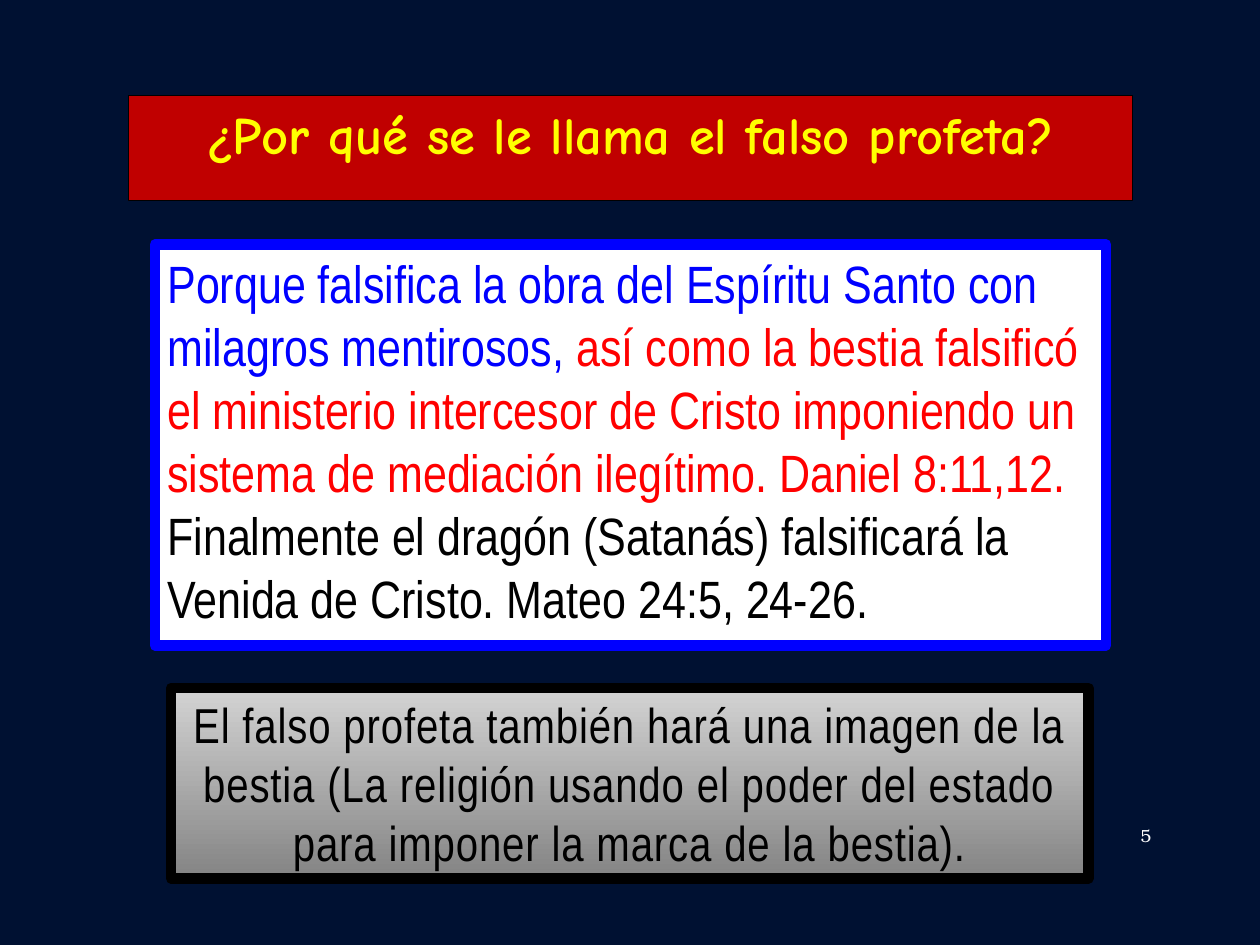
from dataclasses import dataclass

from lxml.etree import SubElement
from pptx import Presentation
from pptx.dml.color import RGBColor as Rgb
from pptx.enum.shapes import MSO_SHAPE as Shape
from pptx.enum.text import MSO_ANCHOR as Anchor, MSO_AUTO_SIZE as AutoSize, PP_ALIGN as Align
from pptx.oxml.ns import qn
from pptx.util import Cm, Pt


@dataclass(frozen=True)
class Theme:
    night: Rgb = Rgb(0x00, 0x11, 0x32)
    crimson: Rgb = Rgb(0xC0, 0x00, 0x00)
    yellow: Rgb = Rgb(0xFF, 0xFF, 0x00)
    blue: Rgb = Rgb(0x00, 0x00, 0xFF)
    red: Rgb = Rgb(0xFF, 0x00, 0x00)
    black: Rgb = Rgb(0x00, 0x00, 0x00)
    white: Rgb = Rgb(0xFF, 0xFF, 0xFF)
    light_gray: Rgb = Rgb(0xD3, 0xD3, 0xD3)
    dark_gray: Rgb = Rgb(0x84, 0x84, 0x84)
    title_font: str = "Comic Neue"
    text_font: str = "Arial Narrow"
    number_font: str = "TeX Gyre Bonum"
    large: Pt = Pt(30)
    medium: Pt = Pt(28)
    small: Pt = Pt(10)


theme = Theme()


def place(box, left, top, width, height, anchor, auto_size=AutoSize.NONE):
    box.left, box.top, box.width, box.height = Cm(left), Cm(top), Cm(width), Cm(height)
    frame = box.text_frame
    frame.word_wrap = True
    frame.auto_size = auto_size
    frame.vertical_anchor = anchor


def write(para, spans, font, size, align, outline=None, bold=False):
    """Fill a paragraph with (text, colour) spans, outlined in their own colour."""
    para.alignment = align
    para.space_before = Pt(0)
    para.font.name, para.font.size, para.font.bold = font, size, bold
    for text, color in spans:
        span = para.add_run()
        span.text = text
        span.font.color.rgb = color
        if outline:
            properties = span.font._element
            line = SubElement(properties, qn("a:ln"), w=str(Pt(outline)))
            fill = SubElement(line, qn("a:solidFill"))
            SubElement(fill, qn("a:srgbClr"), val=str(color))
            properties.insert(0, line)


deck = Presentation()
deck.slide_width, deck.slide_height = Cm(25.4), Cm(19.05)
page = deck.slides.add_slide(deck.slide_layouts[1])
page.background.fill.solid()
page.background.fill.fore_color.rgb = theme.night

# Title banner
title = page.shapes.title
place(title, 2.59, 1.93, 20.24, 1.55, Anchor.TOP, AutoSize.SHAPE_TO_FIT_TEXT)
write(title.text_frame.paragraphs[0],
      [("¿Por qué se le llama el falso profeta?", theme.yellow)],
      theme.title_font, theme.large, Align.CENTER, outline=0.75, bold=True)

# Answer
answer = page.placeholders[1]
place(answer, 3.12, 4.93, 19.18, 8.08, Anchor.TOP)
answer_paragraphs = [
    [("Porque falsifica la obra del Espíritu Santo con milagros mentirosos, ", theme.blue),
     ("así como la bestia falsificó el ministerio intercesor de Cristo imponiendo "
      "un sistema de mediación ilegítimo. Daniel 8:11,12.", theme.red)],
    [("Finalmente el dragón (Satanás) falsificará la Venida de Cristo. "
      "Mateo 24:5, 24-26.", theme.black)],
]
for index, spans in enumerate(answer_paragraphs):
    frame = answer.text_frame
    para = frame.add_paragraph() if index else frame.paragraphs[0]
    properties = para._p.get_or_add_pPr()
    properties.set("marL", "0")
    properties.set("indent", "0")
    SubElement(properties, qn("a:buNone"))
    write(para, spans, theme.text_font, theme.large, Align.LEFT, outline=1.5)

# Closing remark on a gray gradient
remark = page.shapes.add_shape(Shape.RECTANGLE, 0, 0, 0, 0)
remark.shadow.inherit = False
place(remark, 3.45, 13.87, 18.49, 3.84, Anchor.MIDDLE, AutoSize.SHAPE_TO_FIT_TEXT)
para = remark.text_frame.paragraphs[0]
write(para,
      [("El falso profeta también hará una imagen de la bestia (La religión usando "
        "el poder del estado para imponer la marca de la bestia).", theme.black)],
      theme.text_font, theme.medium, Align.CENTER, outline=1.5)
para.runs[0].font._element.set("spc", "50")
remark.fill.gradient()
remark.fill.gradient_angle = 270
for stop, color in zip(remark.fill.gradient_stops, (theme.light_gray, theme.dark_gray)):
    stop.color.rgb = color
    stop.position = 0 if color == theme.light_gray else 1

# Solid fills and borders
for box, color in ((title, theme.crimson), (answer, theme.white)):
    box.fill.solid()
    box.fill.fore_color.rgb = color
for box, color, width in ((title, theme.black, 0.75), (answer, theme.blue, 6),
                          (remark, theme.black, 6)):
    box.line.color.rgb = color
    box.line.width = Pt(width)

# Page number
number = page.shapes.add_textbox(0, 0, 0, 0)
place(number, 21.89, 16.33, 1.57, 1.02, Anchor.MIDDLE)
write(number.text_frame.paragraphs[0], [("5", theme.white)],
      theme.number_font, theme.small, Align.RIGHT)

deck.save("out.pptx")
